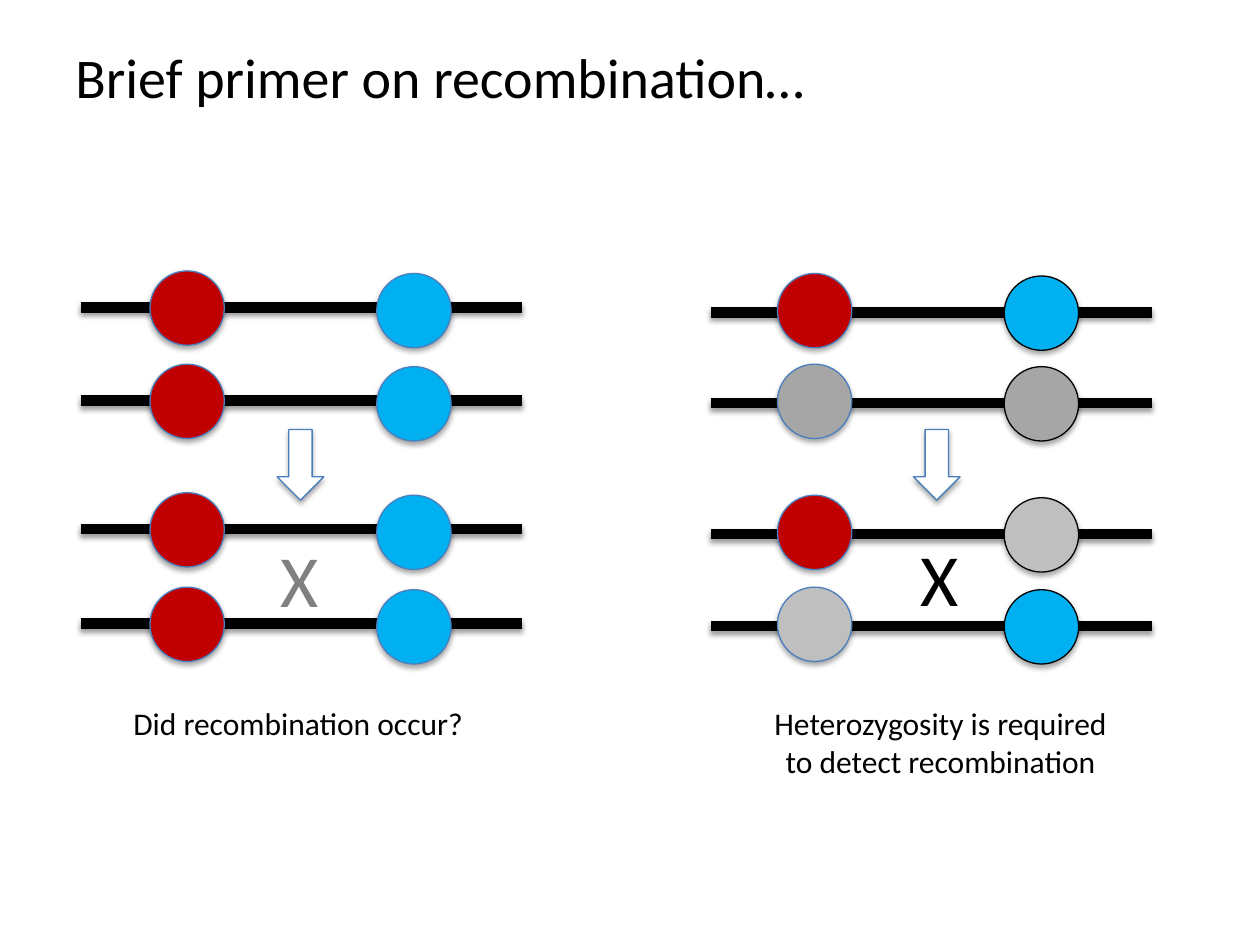
"""Build the recombination primer slide."""
from lxml import etree
from pptx import Presentation, util as u
from pptx.dml.color import RGBColor
from pptx.enum import shapes, text
from pptx.oxml.ns import qn

RED, CYAN, GREY, PALE = "C00000", "00B0F0", "A6A6A6", "BFBFBF"
BLACK, WHITE, EDGE = "000000", "FFFFFF", "4B7EBC"
DIAMETER, LOCUS_GAP, LOCUS_DROP = 0.59, 1.8, 0.02
LINE_LENGTH = 3.5

PANELS = [
    dict(line_x=0.64, locus_x=1.19, arrow_x=2.2, line_drop=0.29, second_edge=EDGE,
         rows=[(2.15, RED, CYAN), (2.89, RED, CYAN),
               (3.91, RED, CYAN), (4.66, RED, CYAN)]),
    dict(line_x=5.64, locus_x=6.17, arrow_x=7.25, line_drop=0.31, second_edge=BLACK,
         rows=[(2.17, RED, CYAN), (2.89, GREY, GREY),
               (3.93, RED, PALE), (4.66, PALE, CYAN)]),
]
LEFT, CENTER = text.PP_ALIGN.LEFT, text.PP_ALIGN.CENTER
TEXTS = [
    ("Brief primer on recombination…", (0.5, 0.29, 8.98, 0.64), 32, BLACK, LEFT, True),
    ("X", (2.13, 4.19, 0.51, 0.81), 42, "808080", LEFT, False),
    ("X", (7.21, 4.18, 0.51, 0.81), 42, BLACK, LEFT, False),
    ("Did recombination occur?", (0.96, 5.54, 2.85, 0.4), 18, BLACK, LEFT, False),
    ("Heterozygosity is required to detect recombination",
     (6.04, 5.54, 2.85, 0.71), 18, BLACK, CENTER, True),
]


def rgb(value):
    return RGBColor.from_string(value)


def inches(*values):
    return [u.Inches(v) for v in values]


def add_shadow(sp, distance, opacity):
    effects = etree.SubElement(sp._element.spPr, qn("a:effectLst"))
    shadow = etree.SubElement(effects, qn("a:outerShdw"), blurRad=str(u.Pt(3.1)),
                              dist=str(u.Pt(distance)), dir="5400000", rotWithShape="0")
    color = etree.SubElement(shadow, qn("a:srgbClr"), val=BLACK)
    etree.SubElement(color, qn("a:alpha"), val=str(opacity * 1000))


def add_strand(s, x, y):
    line = s.shapes.add_connector(shapes.MSO_CONNECTOR.STRAIGHT,
                                  *inches(x, y, x + LINE_LENGTH, y))
    line.line.color.rgb = rgb(BLACK)
    line.line.width = u.Pt(6)
    add_shadow(line, 1.6, 38)


def add_figure(s, kind, box, fill, edge):
    sp = s.shapes.add_shape(kind, *inches(*box))
    sp.fill.solid()
    sp.fill.fore_color.rgb = rgb(fill)
    sp.line.color.rgb = rgb(edge)
    sp.line.width = u.Pt(0.75)
    add_shadow(sp, 1.8, 35)


def add_panel(s, panel):
    for top, first, second in panel["rows"]:
        add_strand(s, panel["line_x"], top + panel["line_drop"])
        x = panel["locus_x"]
        loci = [(x + LOCUS_GAP, top + LOCUS_DROP, second, panel["second_edge"]),
                (x, top, first, EDGE)]
        for left, y, fill, edge in loci:
            add_figure(s, shapes.MSO_SHAPE.OVAL, (left, y, DIAMETER, DIAMETER), fill, edge)
    add_figure(s, shapes.MSO_SHAPE.DOWN_ARROW,
               (panel["arrow_x"], 3.41, 0.37, 0.56), WHITE, EDGE)


def add_text(s, words, box, size, color, align, wrap):
    tf = s.shapes.add_textbox(*inches(*box)).text_frame
    tf.word_wrap = wrap
    tf.auto_size = text.MSO_AUTO_SIZE.SHAPE_TO_FIT_TEXT
    p = tf.paragraphs[0]
    p.text, p.alignment = words, align
    p.font.name, p.font.size = "Calibri", u.Pt(size)
    p.font.color.rgb = rgb(color)


def main():
    prs = Presentation()
    prs.slide_width, prs.slide_height = inches(10, 7.5)
    s = prs.slides.add_slide(prs.slide_layouts[6])
    for panel in PANELS:
        add_panel(s, panel)
    for item in TEXTS:
        add_text(s, *item)
    prs.save("out.pptx")


if __name__ == "__main__":
    main()
